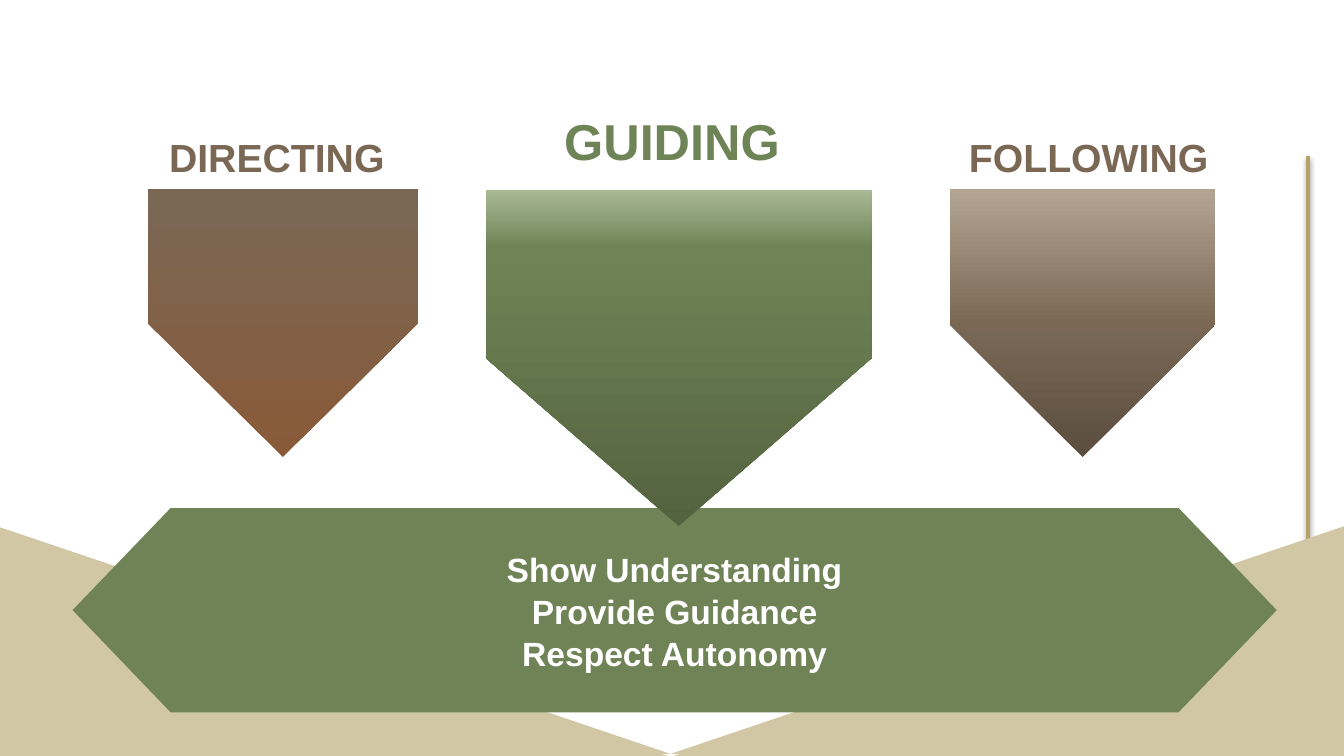
from copy import deepcopy
from dataclasses import dataclass

from lxml import etree
from pptx import Presentation
from pptx.dml.color import RGBColor
from pptx.enum.shapes import MSO_CONNECTOR, MSO_SHAPE
from pptx.enum.text import MSO_ANCHOR, MSO_AUTO_SIZE, PP_ALIGN
from pptx.oxml.ns import qn
from pptx.util import Inches, Pt

LINE = MSO_CONNECTOR.STRAIGHT
PLATE, WEDGE = MSO_SHAPE.PENTAGON, MSO_SHAPE.RIGHT_TRIANGLE
TOP, MID = MSO_ANCHOR.TOP, MSO_ANCHOR.MIDDLE
CENTER = PP_ALIGN.CENTER
FIT = MSO_AUTO_SIZE.SHAPE_TO_FIT_TEXT

# The grid has 100 columns across the slide; its cells are square
WIDE, HIGH = Inches(10), Inches(5.625)
CELL = WIDE / 100


@dataclass(frozen=True)
class Theme:
    font: str = "Arial"
    brown: str = "7A6855"
    green: str = "6F8456"
    band: str = "6F8356"
    sand: str = "D1C7A4"
    gold: str = "B3A369"
    white: str = "FFFFFF"
    small: float = 21
    large: float = 27
    body: float = 18


THEME = Theme()

# Stops run from the tip up to the flat edge
RUST = [(0, "895A39"), (1, THEME.brown)]
MOSS = [(0, "536340"), (0.83, THEME.green), (1, "A8B994")]
TAUPE = [(0, "5B4E3F"), (0.5, THEME.brown), (1, "B4A493")]

# Title, type size, colour, title box, arrow box, stops
STYLES = [
    ("DIRECTING", THEME.small, THEME.brown,
     (10.2, 9.5, 20.8, 4.3), (11, 14.1, 20.1, 19.9), RUST),
    ("FOLLOWING", THEME.small, THEME.brown,
     (70.4, 9.5, 21.2, 4.3), (70.7, 14.1, 19.7, 19.9), TAUPE),
    ("GUIDING", THEME.large, THEME.green,
     (34.3, 7.8, 31.4, 5.2), (36.15, 14.15, 28.7, 25), MOSS),
]
AIMS = ["Show Understanding", "Provide Guidance", "Respect Autonomy"]


def grid(*cells):
    return [round(n * CELL) for n in cells]


def plain(shape, color):
    shape.shadow.inherit = False
    shape.line.fill.background()
    shape.fill.solid()
    shape.fill.fore_color.rgb = RGBColor.from_string(color)


def write(shape, lines, size, color, anchor=TOP, space=1.0):
    frame = shape.text_frame
    frame.word_wrap = True
    frame.vertical_anchor = anchor
    frame.margin_left = frame.margin_right = Inches(0.07)
    frame.margin_top = frame.margin_bottom = Inches(0.04)
    for i, line in enumerate(lines):
        para = frame.add_paragraph() if i else frame.paragraphs[0]
        para.alignment = CENTER
        para.line_spacing = space
        run = para.add_run()
        run.text = line
        run.font.name = THEME.font
        run.font.size = Pt(size)
        run.font.bold = True
        run.font.color.rgb = RGBColor.from_string(color)


def blend(shape, stops):
    fill = shape.fill
    fill.gradient()
    fill.gradient_angle = 180
    marks = shape._element.spPr.find(".//" + qn("a:gsLst"))
    while len(marks) < len(stops):
        marks.append(deepcopy(marks[-1]))
    for mark, (place, color) in zip(fill.gradient_stops, stops):
        mark.position = place
        mark.color.rgb = RGBColor.from_string(color)


def draw_rule(shapes, x, top, end):
    line = shapes.add_connector(LINE, *grid(x, top, x, end))
    line.line.width = Pt(2)
    line.line.color.rgb = RGBColor.from_string(THEME.gold)
    # Soft shadow below the line
    glow = etree.SubElement(line._element.spPr, qn("a:effectLst"))
    cast = etree.SubElement(glow, qn("a:outerShdw"), blurRad=str(Pt(3.1)),
                            dist=str(Pt(1.6)), dir="5400000", rotWithShape="0")
    tint = etree.SubElement(cast, qn("a:srgbClr"), val="000000")
    etree.SubElement(tint, qn("a:alpha"), val="38000")


def draw_base(shapes, left, top, width, height):
    """Two layers of wedges that slope down to the middle."""
    half = width / 2
    for drop, tall in ((0, height - 0.2), (3.1, height - 3.1)):
        for side in (0, 1):
            box = grid(left + side * half, top + drop, half, tall)
            wedge = shapes.add_shape(WEDGE, *box)
            plain(wedge, THEME.sand)
            if side:
                wedge._element.spPr.find(qn("a:xfrm")).set("flipH", "1")


def draw_band(shapes, left, top, width, height):
    """Bar with a point at each end, holding the aims."""
    cut = 7.3
    right, end, mid = left + width, top + height, top + height / 2
    spots = [(left + cut, top), (right - cut, top), (right, mid),
             (right - cut, end), (left + cut, end), (left, mid)]
    first, *rest = [grid(*spot) for spot in spots]
    pen = shapes.build_freeform(*first)
    pen.add_line_segments(rest, close=True)
    band = pen.convert_to_shape()
    plain(band, THEME.band)
    write(band, AIMS, THEME.body, THEME.white, anchor=MID, space=1.05)


def draw_arrow(shapes, left, top, width, height, stops):
    """Plate turned to point down within the given box."""
    shift = (width - height) / 2
    box = grid(left + shift, top - shift, height, width)
    arrow = shapes.add_shape(PLATE, *box)
    arrow.rotation = 90
    plain(arrow, THEME.white)
    blend(arrow, stops)


def draw_style(shapes, title, size, color, head, body, stops):
    draw_arrow(shapes, *body, stops)
    label = shapes.add_textbox(*grid(*head))
    write(label, [title], size, color)
    label.text_frame.auto_size = FIT


def main():
    deck = Presentation()
    deck.slide_width, deck.slide_height = WIDE, HIGH
    shapes = deck.slides.add_slide(deck.slide_layouts[6]).shapes

    # Backdrop
    draw_rule(shapes, 97.3, 11.6, 51)
    draw_base(shapes, -0.4, 39.1, 100.6, 17.2)

    # Shared aims, then the three styles
    draw_band(shapes, 5.4, 37.8, 89.6, 15.2)
    for style in STYLES:
        draw_style(shapes, *style)

    deck.save("out.pptx")


if __name__ == "__main__":
    main()
